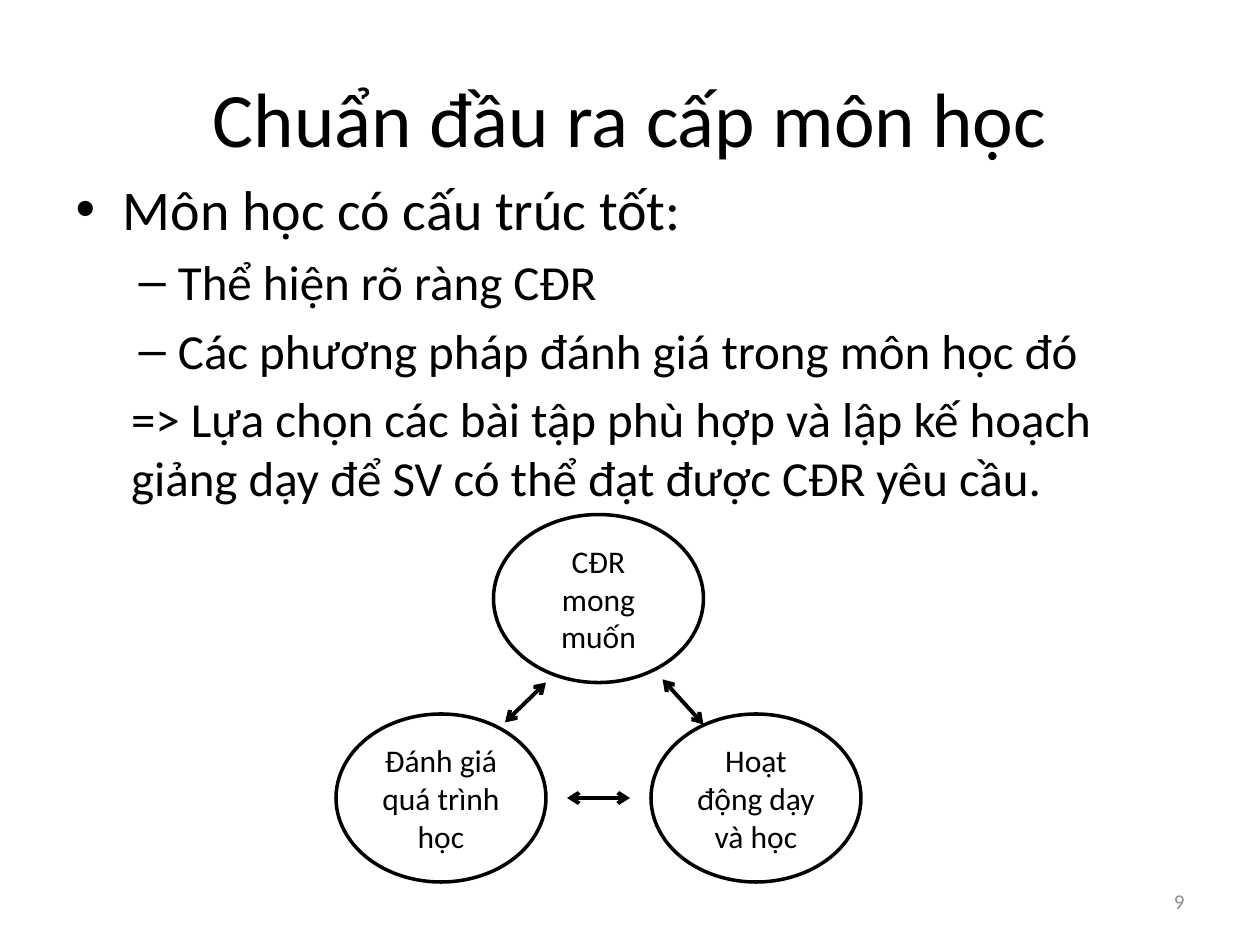
from lxml.etree import SubElement
from pptx import Presentation
from pptx.dml.color import RGBColor
from pptx.enum.shapes import MSO_CONNECTOR as Connector, MSO_SHAPE as Preset
from pptx.enum.text import MSO_ANCHOR as Anchor, PP_ALIGN as Align
from pptx.oxml.ns import qn
from pptx.util import Inches, Pt

COLORS = {"ink": "000000", "paper": "FFFFFF", "muted": "8C8C8C"}
COLUMNS, ROWS = 120, 90
TITLE_AND_CONTENT = 1

TITLE = "Chuẩn đầu ra cấp môn học"
BODY = [
    ("Môn học có cấu trúc tốt:", 0, 32, True),
    ("Thể hiện rõ ràng CĐR", 1, 28, True),
    ("Các phương pháp đánh giá trong môn học đó", 1, 28, True),
    ("=> Lựa chọn các bài tập phù hợp và lập kế hoạch giảng dạy "
     "để SV có thể đạt được CĐR yêu cầu.", 1, 28, False),
]
NODE_SIZE = (20, 16)
NODES = [
    ("CĐR mong muốn", 47, 49),
    ("Hoạt động dạy và học", 62, 68),
    ("Đánh giá quá trình học", 32, 68),
]
ARROWS = [
    ((63.1, 64.7), (67, 69)),
    ((54, 76), (60, 76)),
    ((48.1, 68.8), (52, 65)),
]


def color(name):
    return RGBColor.from_string(COLORS[name])


class SlideBuilder:
    font_name = "Calibri"

    def __init__(self, presentation):
        layout = presentation.slide_layouts[TITLE_AND_CONTENT]
        self.slide = presentation.slides.add_slide(layout)
        self.column = presentation.slide_width / COLUMNS
        self.row = presentation.slide_height / ROWS
        self.slide.background.fill.solid()
        self.slide.background.fill.fore_color.rgb = color("paper")

    def point(self, column, row):
        return round(column * self.column), round(row * self.row)

    def box(self, left, top, width, height):
        return self.point(left, top) + self.point(width, height)

    def move(self, shape, *cells):
        values = zip(("left", "top", "width", "height"), self.box(*cells))
        for name, value in values:
            setattr(shape, name, value)

    def add_text(self, paragraph, text, size, ink="ink", align=None):
        paragraph.alignment = align
        run = paragraph.add_run()
        run.text = text
        for name, value in {"name": self.font_name, "size": Pt(size)}.items():
            setattr(run.font, name, value)
        run.font.color.rgb = color(ink)

    def title(self, text, *cells):
        shape = self.slide.shapes.title
        self.move(shape, *cells)
        shape.text_frame.vertical_anchor = Anchor.MIDDLE
        self.add_text(shape.text_frame.paragraphs[0], text, 44, align=Align.CENTER)

    def body(self, items, *cells):
        shape = self.slide.placeholders[1]
        self.move(shape, *cells)
        frame = shape.text_frame
        for index, (text, level, size, bulleted) in enumerate(items):
            paragraph = frame.add_paragraph() if index else frame.paragraphs[0]
            paragraph.level = level
            self.add_text(paragraph, text, size)
            if not bulleted:
                properties = paragraph._p.get_or_add_pPr()
                properties.set("marL", str(Inches(0.44)))
                properties.set("indent", "0")
                SubElement(properties, qn("a:buNone"))

    def page_number(self, text, *cells):
        frame = self.slide.shapes.add_textbox(*self.box(*cells)).text_frame
        frame.word_wrap = True
        frame.vertical_anchor = Anchor.MIDDLE
        self.add_text(frame.paragraphs[0], text, 12, "muted", Align.RIGHT)

    def node(self, text, *cells):
        shape = self.slide.shapes.add_shape(Preset.OVAL, *self.box(*cells))
        shape.shadow.inherit = False
        shape.fill.solid()
        shape.fill.fore_color.rgb = color("paper")
        shape.line.color.rgb = color("ink")
        shape.line.width = Pt(2)
        frame = shape.text_frame
        frame.word_wrap = True
        frame.vertical_anchor = Anchor.MIDDLE
        self.add_text(frame.paragraphs[0], text, 18, align=Align.CENTER)

    def double_arrow(self, start, end):
        connector = self.slide.shapes.add_connector(
            Connector.STRAIGHT, *self.point(*start), *self.point(*end))
        connector.line.color.rgb = color("ink")
        connector.line.width = Pt(2.25)
        properties = connector._element.spPr
        outline = properties.find(qn("a:ln"))
        for tag in ("a:headEnd", "a:tailEnd"):
            SubElement(outline, qn(tag), type="arrow")
        SubElement(properties, qn("a:effectLst"))


def main():
    presentation = Presentation()
    presentation.slide_width = Inches(10)
    presentation.slide_height = Inches(7.5)
    builder = SlideBuilder(presentation)
    builder.title(TITLE, 6, 3.6, 108, 15)
    builder.body(BODY, 6, 16, 108, 59.4)
    builder.page_number("9", 86, 83.4, 28, 4.8)
    for text, left, top in NODES:
        builder.node(text, left, top, *NODE_SIZE)
    for start, end in ARROWS:
        builder.double_arrow(start, end)
    presentation.save("out.pptx")


if __name__ == "__main__":
    main()
